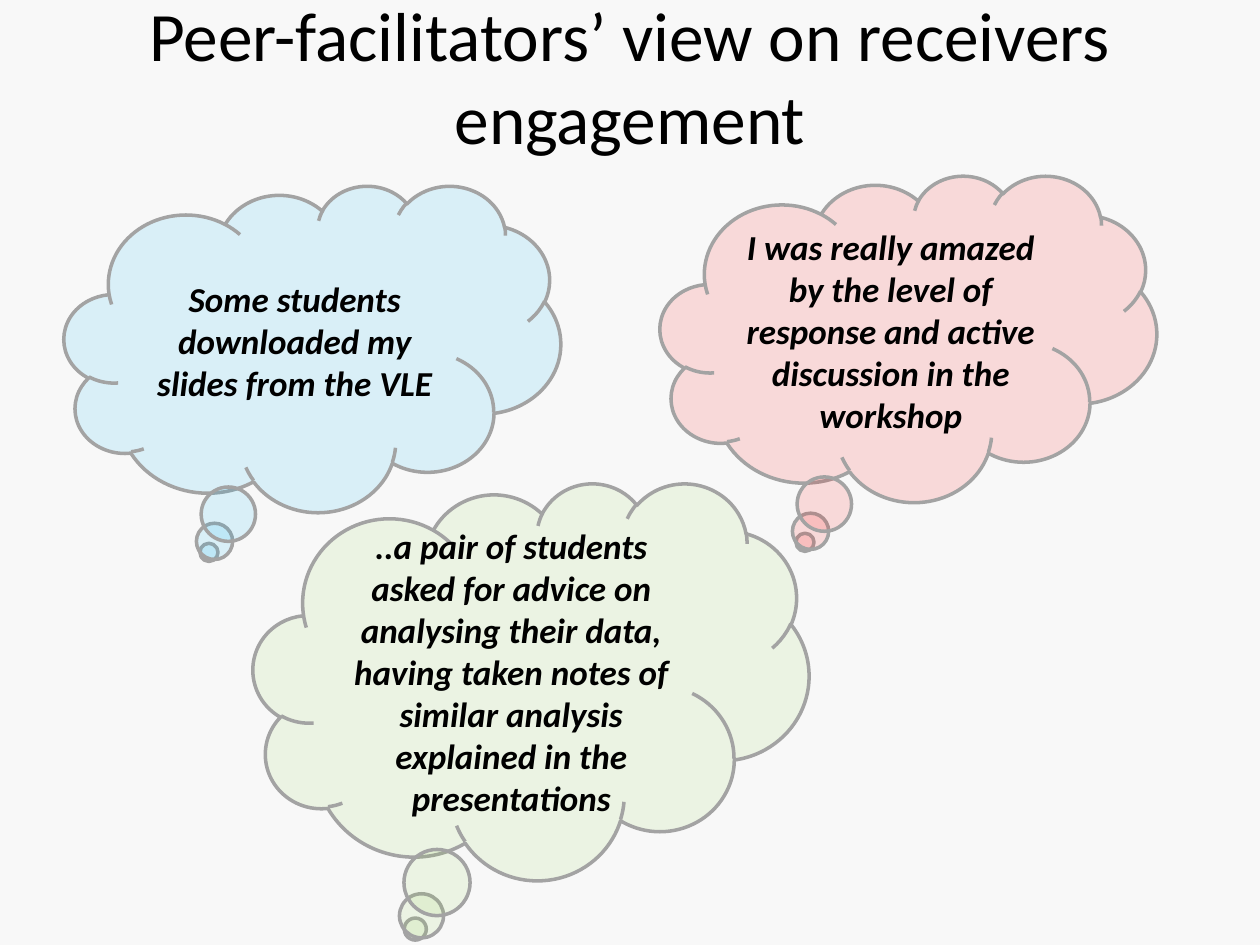
import pptx
import pptx.util
from pptx.dml.color import RGBColor
from pptx.enum.shapes import MSO_SHAPE
from pptx.enum.text import MSO_ANCHOR, MSO_AUTO_SIZE, PP_ALIGN
from pptx.oxml.ns import qn
from lxml import etree

Inches, Pt = pptx.util.Inches, pptx.util.Pt

COLORS = {"background": "F8F8F8", "text": "000000", "outline": "A3A3A3",
          "blue": "00B0F0", "red": "FF0000", "green": "92D050"}
FONT = "Calibri"
OPACITY = 12  # percent
TITLE = "Peer-facilitators’ view on receivers engagement"
SMALL, LARGE = (3.94, 2.59), (4.41, 3.15)
QUOTES = [  # words, colour, left and top, size
    ("Some students downloaded my slides from the VLE",
     "blue", (0.51, 1.47), SMALL),
    ("I was really amazed by the level of response and active discussion "
     "in the workshop",
     "red", (5.24, 1.39), SMALL),
    ("..a pair of students asked for advice on analysing their data, having "
     "taken notes of similar analysis explained in the presentations",
     "green", (2.01, 3.83), LARGE),
]


def rgb(name):
    return RGBColor.from_string(COLORS[name])


def write(sp, text, size, emphasis=False):
    """Put centred text in the middle of a shape."""
    tf = sp.text_frame
    tf.text = text
    tf.word_wrap = True
    tf.auto_size = MSO_AUTO_SIZE.NONE
    tf.vertical_anchor = MSO_ANCHOR.MIDDLE
    p = tf.paragraphs[0]
    p.alignment = PP_ALIGN.CENTER
    font = p.runs[0].font
    font.name, font.size = FONT, Pt(size)
    font.bold = font.italic = emphasis
    font.color.rgb = rgb("text")


def add_thought(s, text, color, position, size):
    sp = s.shapes.add_shape(MSO_SHAPE.CLOUD_CALLOUT,
                            *map(Inches, position + size))
    sp.shadow.inherit = False
    sp.fill.solid()
    sp.fill.fore_color.rgb = rgb(color)
    fill = sp._element.spPr.find(qn("a:solidFill"))
    etree.SubElement(fill[0], qn("a:alpha"), val=str(OPACITY * 1000))
    sp.line.color.rgb = rgb("outline")
    sp.line.width = Pt(2)
    write(sp, text, 20, emphasis=True)


prs = pptx.Presentation()
prs.slide_width, prs.slide_height = Inches(10), Inches(7.5)
s = prs.slides.add_slide(prs.slide_layouts[5])
s.background.fill.solid()
s.background.fill.fore_color.rgb = rgb("background")

title = s.shapes.title
title.left, title.top = Inches(0.5), Inches(-0.03)
title.width, title.height = Inches(9), Inches(1.25)
write(title, TITLE, 39.6)

for quote in QUOTES:
    add_thought(s, *quote)

prs.save("out.pptx")
